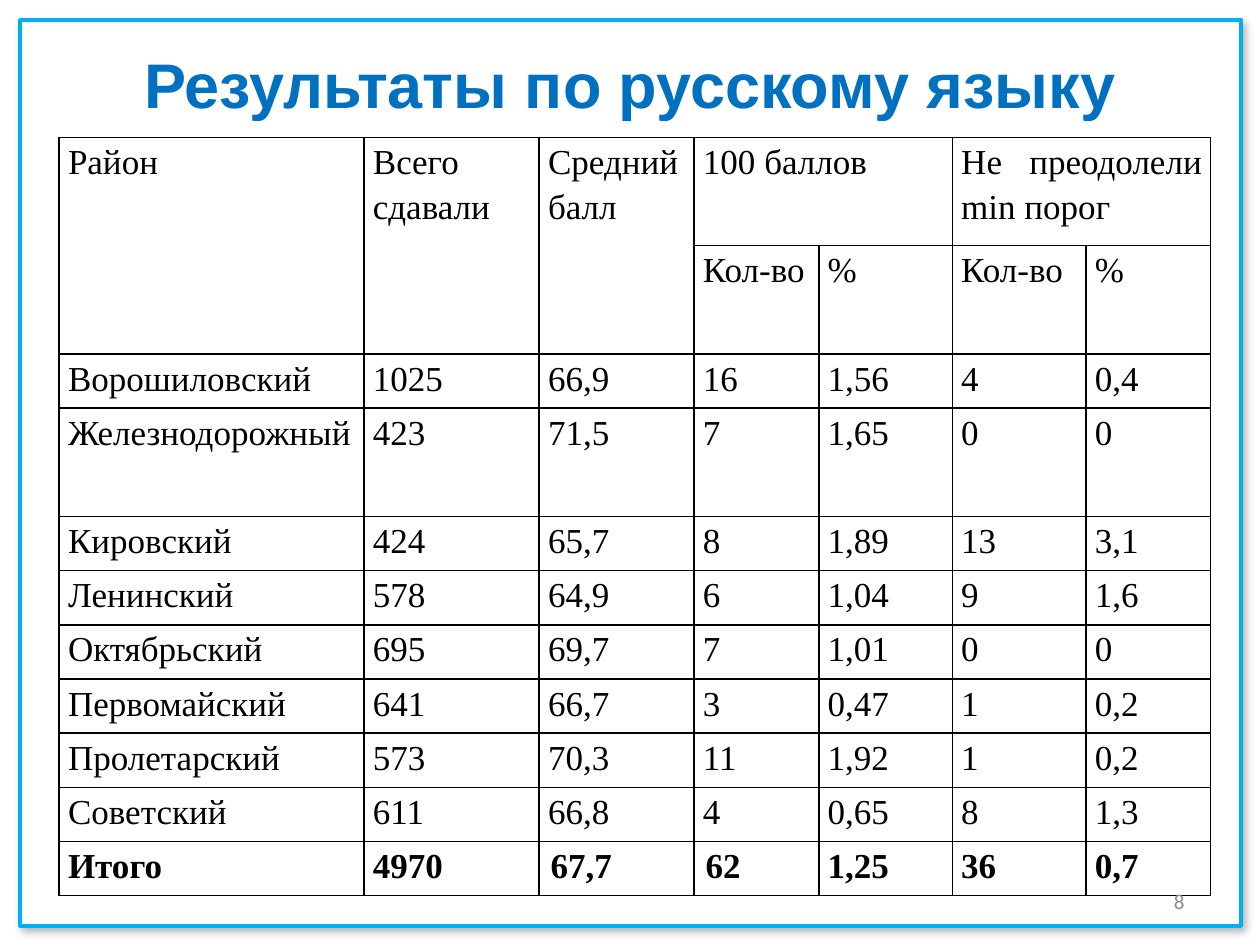
"""Builds the slide with the Russian language exam results by district."""
from dataclasses import dataclass
from typing import Any

from lxml import etree
from pptx import Presentation
from pptx.dml.color import RGBColor
from pptx.enum.shapes import MSO_SHAPE
from pptx.enum.text import MSO_ANCHOR, PP_ALIGN
from pptx.oxml import parse_xml
from pptx.util import Inches, Pt

RECTANGLE = MSO_SHAPE.RECTANGLE
MIDDLE, TOP = MSO_ANCHOR.MIDDLE, MSO_ANCHOR.TOP
LEFT, CENTER, RIGHT, JUSTIFY = PP_ALIGN.LEFT, PP_ALIGN.CENTER, PP_ALIGN.RIGHT, PP_ALIGN.JUSTIFY
DRAWING_NS = "http://schemas.openxmlformats.org/drawingml/2006/main"
GRID_COLUMNS, GRID_ROWS = 1000, 750
UNIT = Inches(10) // GRID_COLUMNS


@dataclass(frozen=True)
class TextStyle:
    """Font, size, colour and weight of a text."""
    name: str
    size: float
    color: str
    bold: bool = False


@dataclass(frozen=True)
class Theme:
    """Colours and text styles of the slide."""
    paper: str = "FFFFFF"
    frame: str = "00B0F0"
    ink: str = "000000"
    title: TextStyle = TextStyle("Arial", 36, "0070C0", True)
    body: TextStyle = TextStyle("Times New Roman", 20, "000000")
    total: TextStyle = TextStyle("Times New Roman", 20, "000000", True)
    number: TextStyle = TextStyle("Calibri", 12, "8C8C8C")


@dataclass(frozen=True)
class Area:
    """A rectangle in grid columns and rows."""
    left: int
    top: int
    width: int
    height: int

    def lengths(self) -> tuple[int, int, int, int]:
        """Return the position and size in slide units."""
        return self.left * UNIT, self.top * UNIT, self.width * UNIT, self.height * UNIT


@dataclass(frozen=True)
class Caption:
    """A line of text in its own area."""
    text: str
    area: Area
    style: TextStyle
    alignment: Any


THEME = Theme()
FRAME = Area(16, 16, 969, 719)
CAPTIONS = (
    Caption("Результаты по русскому языку", Area(50, 30, 900, 72), THEME.title, CENTER),
    Caption("8", Area(717, 695, 233, 40), THEME.number, RIGHT),
)
COLUMN_WIDTHS = (242, 139, 123, 99, 106, 106, 99)
LINE_HEIGHT = 43
TALL_ROWS = (0, 1, 3)
MERGES = ((0, 0, 1, 0), (0, 1, 1, 1), (0, 2, 1, 2), (0, 3, 0, 4), (0, 5, 0, 6))
RESULTS = (
    ("Район", "Всего сдавали", "Средний балл", "100 баллов", "", "Не преодолели min порог", ""),
    ("", "", "", "Кол-во", "%", "Кол-во", "%"),
    ("Ворошиловский", "1025", "66,9", "16", "1,56", "4", "0,4"),
    ("Железнодорожный", "423", "71,5", "7", "1,65", "0", "0"),
    ("Кировский", "424", "65,7", "8", "1,89", "13", "3,1"),
    ("Ленинский", "578", "64,9", "6", "1,04", "9", "1,6"),
    ("Октябрьский", "695", "69,7", "7", "1,01", "0", "0"),
    ("Первомайский", "641", "66,7", "3", "0,47", "1", "0,2"),
    ("Пролетарский", "573", "70,3", "11", "1,92", "1", "0,2"),
    ("Советский", "611", "66,8", "4", "0,65", "8", "1,3"),
    ("Итого", "4970", "67,7", "62", "1,25", "36", "0,7"),
)
TOTAL_ROW = len(RESULTS) - 1
LEFT_ALIGNED = ((TOTAL_ROW - 1, 0), (TOTAL_ROW, 0))
INDENTED = ((TOTAL_ROW, 2), (TOTAL_ROW, 3))


def apply(target: Any, values: dict[str, Any]) -> None:
    """Set every attribute named in the format values."""
    for attribute, value in values.items():
        setattr(target, attribute, value)


def write(paragraph: Any, text: str, style: TextStyle) -> None:
    """Add styled text to a paragraph."""
    run = paragraph.add_run()
    run.text = text
    apply(run.font, {"name": style.name, "size": Pt(style.size), "bold": style.bold})
    run.font.color.rgb = RGBColor.from_string(style.color)


def draw_frame(slide: Any, area: Area) -> None:
    """Draw the outlined page frame with its soft shadow."""
    frame = slide.shapes.add_shape(RECTANGLE, *area.lengths())
    frame.shadow.inherit = False
    frame.fill.solid()
    frame.fill.fore_color.rgb = RGBColor.from_string(THEME.paper)
    frame.line.color.rgb = RGBColor.from_string(THEME.frame)
    frame.line.width = Pt(2)
    effects = frame._element.spPr.find(f"{{{DRAWING_NS}}}effectLst")
    effects.append(parse_xml(
        f'<a:outerShdw xmlns:a="{DRAWING_NS}" blurRad="{Pt(4.5)}" dist="{Pt(2.6)}" '
        f'dir="{53 * 60000}" algn="tl" rotWithShape="0"><a:srgbClr val="{THEME.ink}">'
        '<a:alpha val="30000"/></a:srgbClr></a:outerShdw>'))


def draw_caption(slide: Any, caption: Caption) -> None:
    """Draw one caption."""
    frame = slide.shapes.add_textbox(*caption.area.lengths()).text_frame
    apply(frame, {"word_wrap": True, "vertical_anchor": MIDDLE})
    paragraph = frame.paragraphs[0]
    paragraph.alignment = caption.alignment
    write(paragraph, caption.text, caption.style)


def outline_cell(cell: Any) -> None:
    """Give a cell thin borders and no fill."""
    properties = cell._tc.get_or_add_tcPr()
    for side in ("lnL", "lnR", "lnT", "lnB"):
        border = etree.SubElement(properties, f"{{{DRAWING_NS}}}{side}", w=str(Pt(1)))
        fill = etree.SubElement(border, f"{{{DRAWING_NS}}}solidFill")
        etree.SubElement(fill, f"{{{DRAWING_NS}}}srgbClr", val=THEME.ink)
    cell.fill.background()


def fill_cell(cell: Any, text: str, row: int, column: int) -> None:
    """Format one cell and write its value."""
    place = (row, column)
    apply(cell, {
        "margin_left": Inches(0.07), "margin_right": Inches(0.07),
        "margin_top": 0, "margin_bottom": 0, "vertical_anchor": TOP,
    })
    outline_cell(cell)
    if not text:
        return
    paragraph = cell.text_frame.paragraphs[0]
    apply(paragraph, {
        "alignment": LEFT if place in LEFT_ALIGNED else JUSTIFY,
        "line_spacing": 1.15,
        "space_after": Pt(0 if place in LEFT_ALIGNED + INDENTED else 10),
    })
    if place in INDENTED:
        paragraph._p.get_or_add_pPr().set("indent", str(Inches(0.02)))
    write(paragraph, text, THEME.total if row == TOTAL_ROW else THEME.body)


def draw_results(slide: Any) -> None:
    """Draw the table of results."""
    heights = [LINE_HEIGHT * (2 if row in TALL_ROWS else 1) for row in range(len(RESULTS))]
    area = Area(47, 109, sum(COLUMN_WIDTHS), sum(heights))
    table = slide.shapes.add_table(len(RESULTS), len(COLUMN_WIDTHS), *area.lengths()).table
    apply(table, {"first_row": False, "horz_banding": False})
    for column, width in zip(table.columns, COLUMN_WIDTHS):
        column.width = width * UNIT
    for row, height in zip(table.rows, heights):
        row.height = height * UNIT
    for top, left, bottom, right in MERGES:
        table.cell(top, left).merge(table.cell(bottom, right))
    for row, values in enumerate(RESULTS):
        for column, text in enumerate(values):
            fill_cell(table.cell(row, column), text, row, column)


def main() -> None:
    """Build and save the slide."""
    presentation = Presentation()
    apply(presentation, {"slide_width": GRID_COLUMNS * UNIT, "slide_height": GRID_ROWS * UNIT})
    slide = presentation.slides.add_slide(presentation.slide_layouts[6])
    title, number = CAPTIONS
    draw_frame(slide, FRAME)
    draw_caption(slide, title)
    draw_results(slide)
    draw_caption(slide, number)
    presentation.save("out.pptx")


if __name__ == "__main__":
    main()
